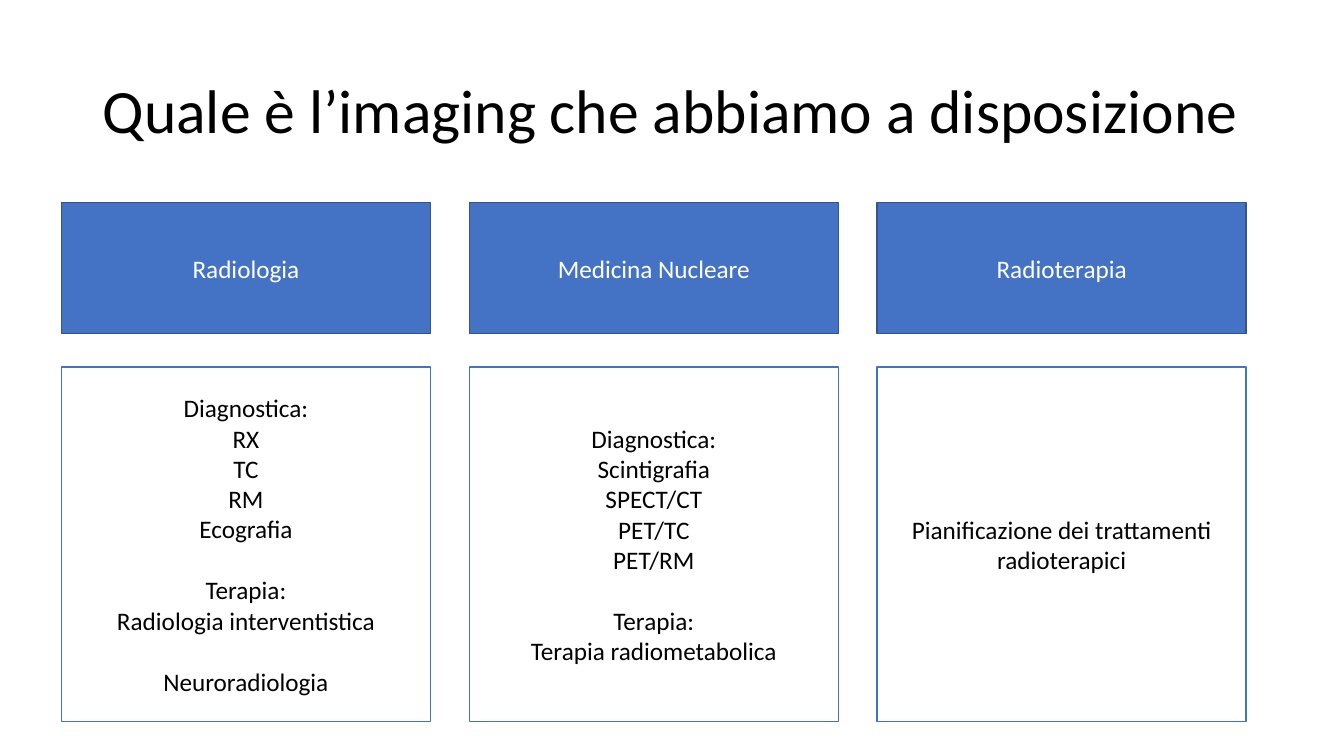
from dataclasses import dataclass

from pptx import Presentation
from pptx.dml.color import RGBColor
from pptx.enum.shapes import MSO_SHAPE
from pptx.enum.text import MSO_ANCHOR, PP_ALIGN
from pptx.util import Inches, Pt

FONT = "Calibri"
BLUE, DARK_BLUE, WHITE, BLACK = "4472C4", "325491", "FFFFFF", "000000"
GRID_LEFT, GRID_RIGHT, COLUMN_WIDTH = 0.61, 12.36, 3.66
GROUP_GAP = 22


@dataclass(frozen=True)
class Row:
    top: float
    height: float
    fill: str
    line: str
    ink: str


@dataclass(frozen=True)
class Department:
    name: str
    groups: tuple[tuple[str, ...], ...]


HEADER = Row(2.01, 1.3, BLUE, DARK_BLUE, WHITE)
DETAIL = Row(3.64, 3.52, WHITE, BLUE, BLACK)

DEPARTMENTS = (
    Department("Radiologia", (
        ("Diagnostica:", "RX", "TC", "RM", "Ecografia"),
        ("Terapia:", "Radiologia interventistica"),
        ("Neuroradiologia",),
    )),
    Department("Medicina Nucleare", (
        ("Diagnostica:", "Scintigrafia", "SPECT/CT", "PET/TC", "PET/RM"),
        ("Terapia:", "Terapia radiometabolica"),
    )),
    Department("Radioterapia", (
        ("Pianificazione dei trattamenti radioterapici",),
    )),
)


def color(value: str) -> RGBColor:
    return RGBColor.from_string(value)


def write(frame, groups, *, size: float = 18, ink: str = BLACK,
          align=PP_ALIGN.CENTER, spacing: float = 1.0) -> None:
    frame.word_wrap = True
    frame.vertical_anchor = MSO_ANCHOR.MIDDLE
    para = None
    for group_index, group in enumerate(groups):
        for line_index, text in enumerate(group):
            para = frame.add_paragraph() if para else frame.paragraphs[0]
            para.alignment = align
            para.line_spacing = spacing
            if group_index and not line_index:
                para.space_before = Pt(GROUP_GAP)
            span = para.add_run()
            span.text = text
            span.font.name = FONT
            span.font.size = Pt(size)
            span.font.color.rgb = color(ink)


def add_title(page, text: str) -> None:
    box = page.shapes.add_textbox(
        Inches(0.92), Inches(0.4), Inches(11.5), Inches(1.45))
    write(box.text_frame, ((text,),), size=44, align=PP_ALIGN.LEFT, spacing=0.9)


def add_cell(page, column: int, row: Row, groups) -> None:
    pitch = (GRID_RIGHT - GRID_LEFT - COLUMN_WIDTH) / (len(DEPARTMENTS) - 1)
    box = page.shapes.add_shape(
        MSO_SHAPE.RECTANGLE, Inches(GRID_LEFT + column * pitch),
        Inches(row.top), Inches(COLUMN_WIDTH), Inches(row.height))
    box.shadow.inherit = False
    box.fill.solid()
    box.fill.fore_color.rgb = color(row.fill)
    box.line.color.rgb = color(row.line)
    box.line.width = Pt(1)
    write(box.text_frame, groups, ink=row.ink)


def main() -> None:
    deck = Presentation()
    deck.slide_width, deck.slide_height = Inches(13.33), Inches(7.5)
    page = deck.slides.add_slide(deck.slide_layouts[6])
    add_title(page, "Quale è l’imaging che abbiamo a disposizione")
    for column, department in enumerate(DEPARTMENTS):
        add_cell(page, column, HEADER, ((department.name,),))
        add_cell(page, column, DETAIL, department.groups)
    deck.save("out.pptx")


if __name__ == "__main__":
    main()
